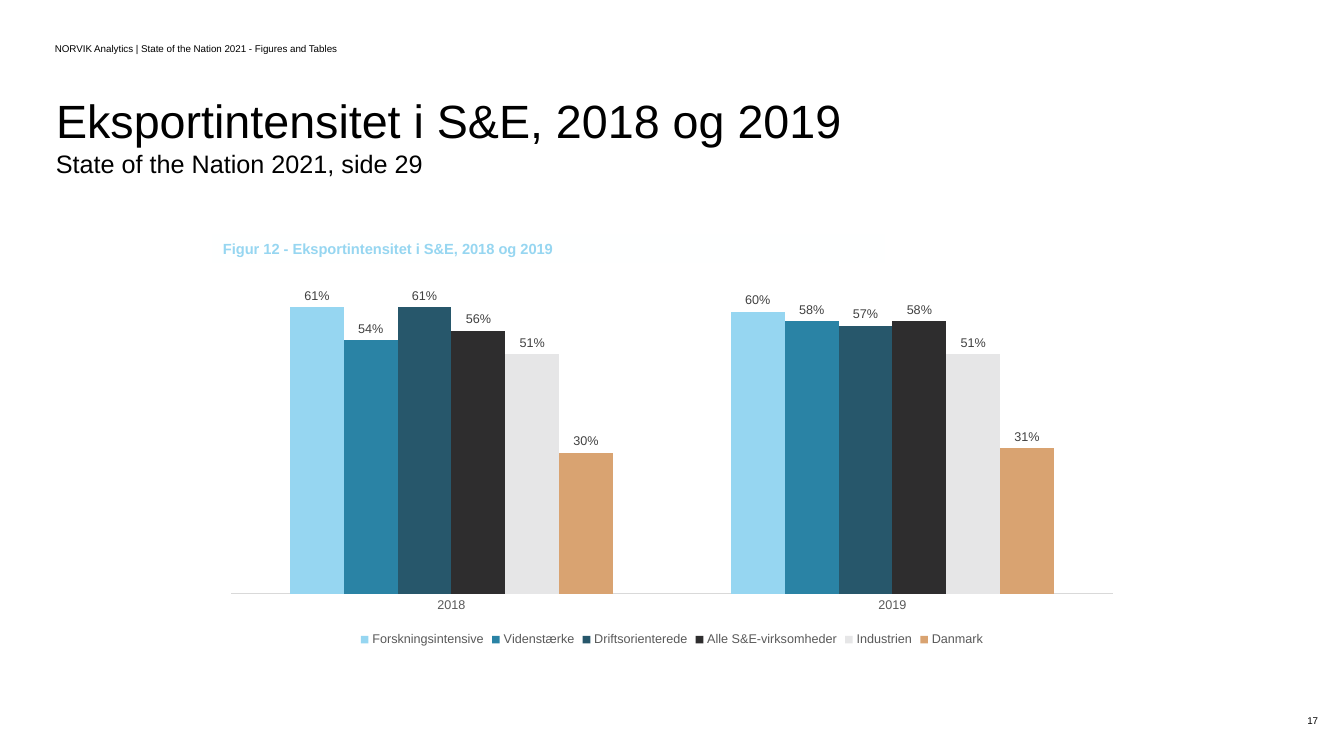
from lxml import etree
from pptx import Presentation
from pptx.chart.data import CategoryChartData
from pptx.dml.color import RGBColor
from pptx.enum.chart import (XL_CHART_TYPE, XL_LABEL_POSITION,
                             XL_LEGEND_POSITION, XL_TICK_MARK)
from pptx.enum.shapes import MSO_SHAPE
from pptx.enum.text import MSO_ANCHOR, PP_ALIGN
from pptx.util import Emu, Pt

EMU_PER_PX = 914400 / 100.8
BLACK = RGBColor(0x00, 0x00, 0x00)
OFF_WHITE = RGBColor(0xFE, 0xFF, 0xFF)
LABEL_GREY = RGBColor(0x40, 0x40, 0x40)
AXIS_GREY = RGBColor(0x59, 0x59, 0x59)
LINE_GREY = RGBColor(0xD9, 0xD9, 0xD9)
SKY = RGBColor(0x96, 0xD6, 0xF1)
TEAL = RGBColor(0x2A, 0x83, 0xA5)
PETROL = RGBColor(0x27, 0x57, 0x6B)
CHARCOAL = RGBColor(0x2E, 0x2D, 0x2E)
PALE = RGBColor(0xE6, 0xE6, 0xE7)
SAND = RGBColor(0xD9, 0xA3, 0x71)

YEARS = ["2018", "2019"]
EXPORT_SHARES = [
    ("Forskningsintensive", SKY, (0.61, 0.60)),
    ("Videnstærke", TEAL, (0.54, 0.58)),
    ("Driftsorienterede", PETROL, (0.61, 0.57)),
    ("Alle S&E-virksomheder", CHARCOAL, (0.56, 0.58)),
    ("Industrien", PALE, (0.51, 0.51)),
    ("Danmark", SAND, (0.30, 0.31)),
]


def px(length):
    return Emu(round(length * EMU_PER_PX))


class SlideBuilder:
    font_name = "Arial"

    def __init__(self, slide):
        self.slide = slide

    def style(self, font, size, color, bold=False):
        font.name = self.font_name
        font.size = Pt(size)
        font.color.rgb = color
        font.bold = bold

    def add_wording(self, shape, wording, size, color=BLACK, bold=False,
                    align=PP_ALIGN.LEFT, anchor=MSO_ANCHOR.TOP):
        frame = shape.text_frame
        frame.word_wrap = True
        frame.vertical_anchor = anchor
        paragraph = frame.paragraphs[0]
        paragraph.alignment = align
        paragraph.space_before = Pt(0)
        run = paragraph.add_run()
        run.text = wording
        self.style(run.font, size, color, bold)
        return paragraph

    def title(self, box, wording, size):
        heading = self.slide.shapes.title
        heading.left, heading.top, heading.width, heading.height = map(px, box)
        self.add_wording(heading, wording, size).line_spacing = 0.8
        heading.text_frame.margin_top = px(10)

    def text(self, box, wording, size, **look):
        label = self.slide.shapes.add_textbox(*map(px, box))
        self.add_wording(label, wording, size, **look)

    def caption(self, box, wording, size, color):
        band = self.slide.shapes.add_shape(MSO_SHAPE.RECTANGLE, *map(px, box))
        band.shadow.inherit = False
        band.fill.solid()
        band.fill.fore_color.rgb = OFF_WHITE
        band.line.fill.background()
        self.add_wording(band, wording, size, color, bold=True)

    def column_chart(self, box, plot_box, categories, rows):
        data = CategoryChartData(number_format="0%")
        data.categories = categories
        for name, _, shares in rows:
            data.add_series(name, shares)
        chart = self.slide.shapes.add_chart(
            XL_CHART_TYPE.COLUMN_CLUSTERED, *map(px, box), data).chart
        self.style(chart.font, 10, BLACK)
        chart.has_title = False

        # Axes
        years = chart.category_axis
        years.major_tick_mark = years.minor_tick_mark = XL_TICK_MARK.NONE
        years.format.line.color.rgb = LINE_GREY
        years.format.line.width = Pt(0.75)
        self.style(years.tick_labels.font, 9, AXIS_GREY)
        shares_axis = chart.value_axis
        shares_axis.minimum_scale, shares_axis.maximum_scale = 0, 0.7
        shares_axis.has_major_gridlines = False
        shares_axis.visible = False

        # Legend
        chart.has_legend = True
        chart.legend.position = XL_LEGEND_POSITION.BOTTOM
        chart.legend.include_in_layout = False
        self.style(chart.legend.font, 9, AXIS_GREY)

        # Columns and their labels
        plot = chart.plots[0]
        plot.gap_width, plot.overlap = 219, 0
        plot.vary_by_categories = False
        for column, (_, color, _) in zip(plot.series, rows):
            column.format.fill.solid()
            column.format.fill.fore_color.rgb = color
            labels = column.data_labels
            labels.show_value = True
            labels.number_format = "0%"
            labels.number_format_is_linked = False
            labels.position = XL_LABEL_POSITION.OUTSIDE_END
            self.style(labels.font, 9, LABEL_GREY)
        self.place_plot(chart, box, plot_box)

    def place_plot(self, chart, box, plot_box):
        area = chart.plots[0]._element.getparent()
        namespace = etree.QName(area).namespace
        for old in area.findall(f"{{{namespace}}}layout"):
            area.remove(old)
        layout = etree.Element(f"{{{namespace}}}layout")
        area.insert(0, layout)
        manual = etree.SubElement(layout, f"{{{namespace}}}manualLayout")
        left, top, width, height = box
        plot_left, plot_top, plot_width, plot_height = plot_box
        settings = {
            "layoutTarget": "inner", "xMode": "edge", "yMode": "edge",
            "x": (plot_left - left) / width, "y": (plot_top - top) / height,
            "w": plot_width / width, "h": plot_height / height,
        }
        for tag, setting in settings.items():
            etree.SubElement(manual, f"{{{namespace}}}{tag}", val=str(setting))


def main():
    deck = Presentation()
    deck.slide_width, deck.slide_height = px(1344), px(756)
    page = SlideBuilder(deck.slides.add_slide(deck.slide_layouts[5]))

    # Page number and running header
    page.text((1026, 701, 302, 40), "17", 7,
              align=PP_ALIGN.RIGHT, anchor=MSO_ANCHOR.MIDDLE)
    page.text((45, 29, 454, 40),
              "NORVIK Analytics | State of the Nation 2021 - Figures and Tables",
              7, anchor=MSO_ANCHOR.MIDDLE)

    # Heading
    page.title((46, 93, 1165, 58), "Eksportintensitet i S&E, 2018 og 2019", 33.3)
    page.text((46, 143, 482, 40), "State of the Nation 2021, side 29", 18)

    # Figure
    page.caption((213, 235, 672, 28),
                 "Figur 12 - Eksportintensitet i S&E, 2018 og 2019", 10.5, SKY)
    page.column_chart((213, 255, 918, 396), (231, 265, 882, 329),
                      YEARS, EXPORT_SHARES)

    deck.save("out.pptx")


if __name__ == "__main__":
    main()
